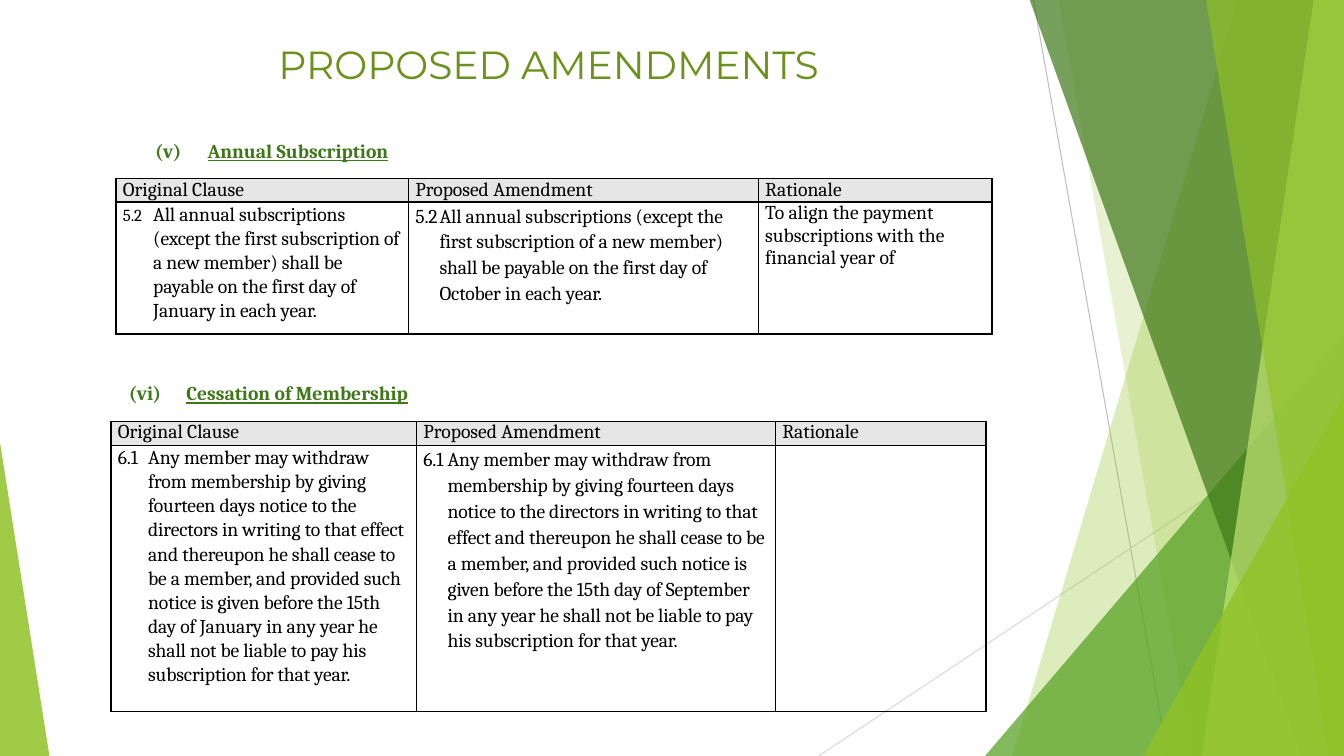
from dataclasses import dataclass

from lxml.etree import SubElement
from pptx import Presentation
from pptx.dml.color import RGBColor
from pptx.enum.shapes import MSO_CONNECTOR, MSO_SHAPE
from pptx.enum.text import MSO_ANCHOR, PP_ALIGN
from pptx.oxml.ns import qn
from pptx.util import Pt

PX = 9144
WIDE, HIGH = 1333, 750
LIME, GREEN, DARK, PALE = "90C226", "54A021", "3F7819", "C0E474"
BLACK, GREY = "000000", "E7E6E6"
HEADS = ("Original Clause", "Proposed Amendment", "Rationale")


@dataclass
class Line:
    start: tuple[int, int]
    end: tuple[int, int]
    tint: str


@dataclass
class Band:
    top: int
    base: int
    tint: str
    alpha: int


@dataclass
class Wedge:
    left: int
    top: int
    width: int
    peak: int
    tint: str
    alpha: int


@dataclass
class Clause:
    mark: str
    title: str
    spot: tuple[int, int]
    gap: int
    table: tuple[int, int]
    cols: tuple[int, ...]
    rows: tuple[int, int]
    number: str
    size: int
    body: str
    months: tuple[str, str]
    reason: str


LINES = (
    Line((1025, 0), (1158, 750), "BFBFBF"),
    Line((1333, 403), (812, 750), "D9D9D9"),
)
FACETS = (
    Band(1228, 1004, LIME, 30),
    Band(1050, 1183, LIME, 20),
    Wedge(977, 333, 356, 1, GREEN, 72),
    Band(1021, 1291, DARK, 70),
    Band(1303, 1192, PALE, 70),
    Band(1196, 1318, LIME, 65),
    Wedge(1134, 393, 199, 1, LIME, 80),
    Wedge(0, 439, 49, 0, LIME, 85),
)
CLAUSES = (
    Clause(
        "(v)", "Annual Subscription", (144, 132), 52,
        (115, 177), (290, 347, 232), (23, 131), "5.2", 12,
        "All annual subscriptions (except the first subscription of a new "
        "member) shall be payable on the first day of {} in each year.",
        ("January", "October"),
        "To align the payment subscriptions with the financial year of",
    ),
    Clause(
        "(vi)", "Cessation of Membership", (118, 373), 57,
        (110, 418), (303, 356, 209), (24, 264), "6.1", 14,
        "Any member may withdraw from membership by giving fourteen days "
        "notice to the directors in writing to that effect and thereupon he "
        "shall cease to be a member, and provided such notice is given before "
        "the 15th day of {} in any year he shall not be liable to pay his "
        "subscription for that year.",
        ("January", "September"), "",
    ),
)


def px(*sizes: int) -> list[int]:
    """Turn px into EMU."""
    return [size * PX for size in sizes]


def paint(target, tint: str) -> None:
    """Give a fill a solid colour."""
    target.solid()
    target.fore_color.rgb = RGBColor.from_string(tint)


def write(para, text: str, *, size: int = 14, font: str = "Cambria",
          tint: str = BLACK, bold: bool = False, under: bool = False,
          track: int = 0) -> None:
    """Add a run of text to a paragraph."""
    run = para.add_run()
    run.text = text
    run.font.size, run.font.name = Pt(size), font
    run.font.bold, run.font.underline = bold, under
    run.font.color.rgb = RGBColor.from_string(tint)
    if track:
        run.font._element.set("spc", str(track))


def hang(para, left: int) -> None:
    """Hang the first line of a paragraph back to the edge."""
    props = para._p.get_or_add_pPr()
    props.set("marL", str(left * PX))
    props.set("indent", str(-left * PX))


def rule(slide, line: Line) -> None:
    """Draw a thin line."""
    link = slide.shapes.add_connector(
        MSO_CONNECTOR.STRAIGHT, *px(*line.start, *line.end))
    link.line.width = Pt(0.75)
    paint(link.line.fill, line.tint)
    SubElement(link._element.spPr, qn("a:effectLst"))


def facet(slide, item: Band | Wedge) -> None:
    """Draw a clear band or wedge."""
    if isinstance(item, Band):
        form = slide.shapes.build_freeform(item.top, -1, scale=PX)
        form.add_line_segments(
            [(WIDE, -1), (WIDE, HIGH), (item.base, HIGH)], close=True)
        shape = form.convert_to_shape()
    else:
        shape = slide.shapes.add_shape(
            MSO_SHAPE.ISOSCELES_TRIANGLE,
            *px(item.left, item.top, item.width, HIGH - item.top))
        shape.adjustments[0] = item.peak
    shape.shadow.inherit = False
    shape.line.fill.background()
    paint(shape.fill, item.tint)
    color = shape._element.spPr.find(f"{qn('a:solidFill')}/{qn('a:srgbClr')}")
    SubElement(color, qn("a:alpha"), val=str(item.alpha * 1000))


def label(slide, box: tuple[int, ...], anchor: MSO_ANCHOR):
    """Add a text box and return its first paragraph."""
    frame = slide.shapes.add_textbox(*px(*box)).text_frame
    frame.word_wrap = True
    frame.vertical_anchor = anchor
    return frame.paragraphs[0]


def dress(cell, tint: str | None) -> None:
    """Set the insets, borders and fill of a cell."""
    cell.margin_left, cell.margin_right = px(7, 7)
    cell.margin_top = cell.margin_bottom = 0
    props = cell._tc.get_or_add_tcPr()
    for side in ("lnL", "lnR", "lnT", "lnB"):
        edge = SubElement(props, qn(f"a:{side}"), w=str(Pt(1)))
        solid = SubElement(edge, qn("a:solidFill"))
        SubElement(solid, qn("a:srgbClr"), val=BLACK)
    if tint:
        paint(cell.fill, tint)
    else:
        cell.fill.background()


def grid(slide, item: Clause) -> None:
    """Draw the table of a clause."""
    table = slide.shapes.add_table(
        2, 3, *px(*item.table, sum(item.cols), sum(item.rows))).table
    table.first_row = table.horz_banding = False
    for col, width in zip(table.columns, item.cols):
        col.width = width * PX
    for row, height in zip(table.rows, item.rows):
        row.height = height * PX
    for num, head in enumerate(HEADS):
        dress(table.cell(0, num), GREY)
        dress(table.cell(1, num), None)
        write(table.cell(0, num).text_frame.paragraphs[0], head)
    styles = ((30, 1.07, item.size), (24, 1.15, 14))
    for num, (month, style) in enumerate(zip(item.months, styles)):
        left, space, size = style
        para = table.cell(1, num).text_frame.paragraphs[0]
        hang(para, left)
        para.line_spacing = space
        write(para, f"{item.number}\t", size=size, track=-10)
        write(para, item.body.format(month), track=-10)
    if item.reason:
        write(table.cell(1, 2).text_frame.paragraphs[0], item.reason)


def main() -> None:
    """Build the slide and save it."""
    deck = Presentation()
    deck.slide_width, deck.slide_height = px(WIDE, HIGH)
    slide = deck.slides.add_slide(deck.slide_layouts[6])
    for line in LINES:
        rule(slide, line)
    for item in FACETS:
        facet(slide, item)
    title = label(slide, (74, 35, 940, 67), MSO_ANCHOR.TOP)
    title.alignment = PP_ALIGN.CENTER
    write(title, "PROPOSED AMENDMENTS", size=28, font="Montserrat", tint="6C921D")
    for item in CLAUSES:
        para = label(slide, (*item.spot, 552, 34), MSO_ANCHOR.MIDDLE)
        hang(para, item.gap)
        write(para, f"{item.mark}\t", tint=DARK, bold=True)
        write(para, item.title, tint=DARK, bold=True, under=True)
        grid(slide, item)
    deck.save("out.pptx")


if __name__ == "__main__":
    main()
